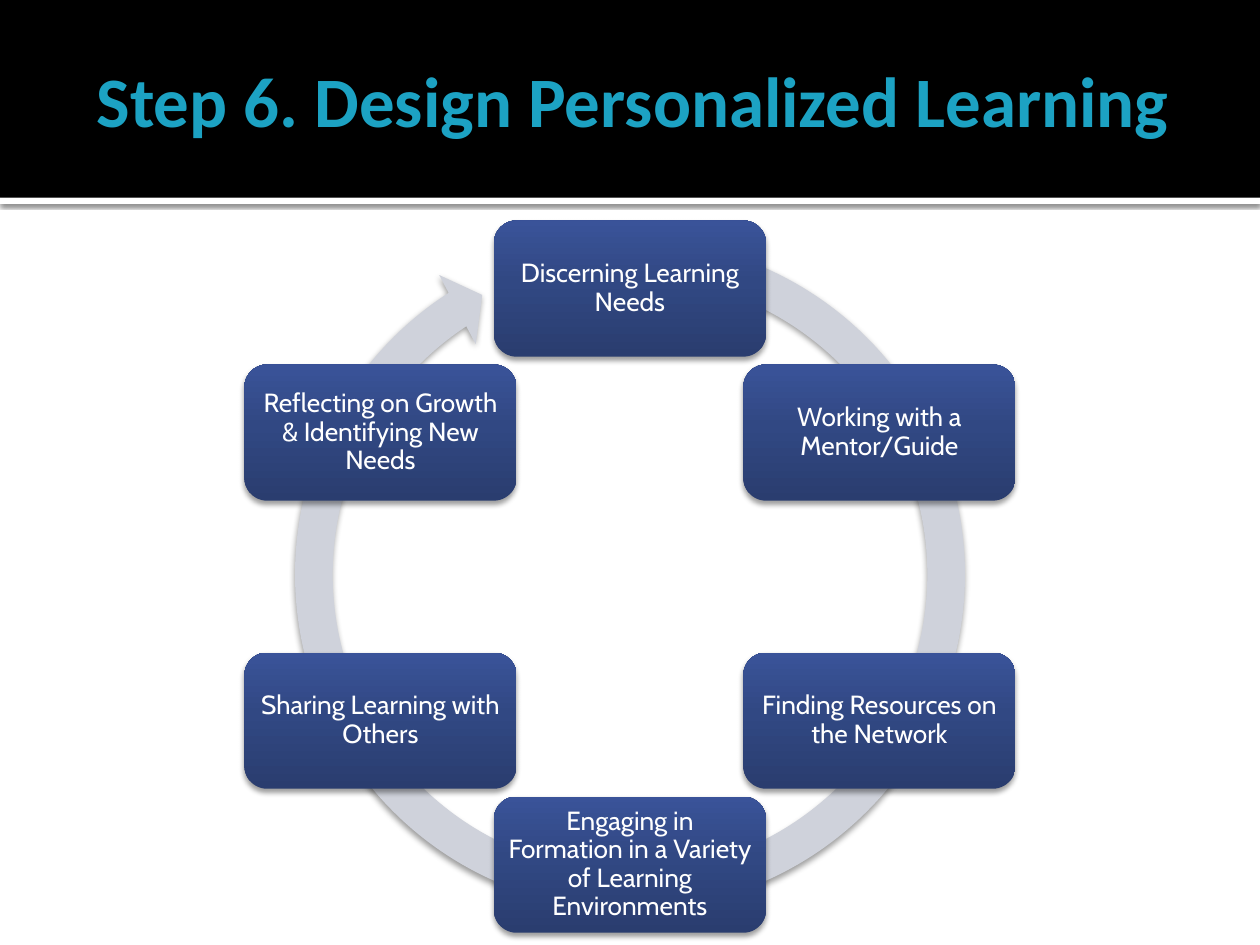
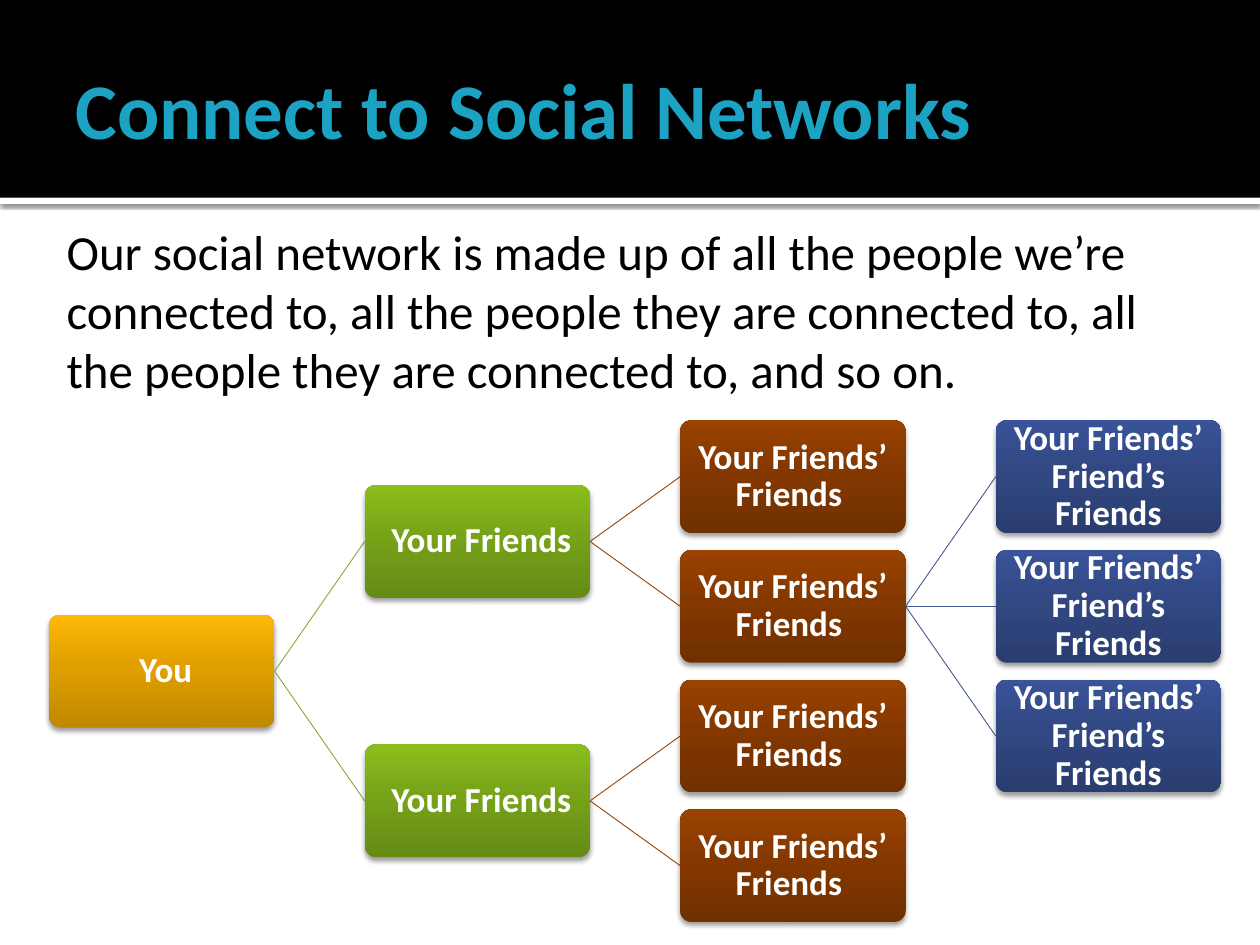
from copy import deepcopy
from math import cos, radians, sin

from lxml.etree import SubElement
from pptx import Presentation
from pptx.dml.color import RGBColor as RGB
from pptx.enum.shapes import MSO_CONNECTOR as CONNECTOR, MSO_SHAPE as SHAPE
from pptx.enum.text import MSO_ANCHOR as ANCHOR, PP_ALIGN as ALIGN
from pptx.oxml.ns import qn
from pptx.util import Pt

BLACK = RGB(0x00, 0x00, 0x00)
WHITE = RGB(0xFF, 0xFF, 0xFF)
TEAL = RGB(0x1C, 0xA2, 0xC3)
RING_GRAY = RGB(0xCF, 0xD2, 0xDB)
GREEN_LINE = RGB(0x84, 0xAA, 0x33)
BROWN_LINE = RGB(0x96, 0x43, 0x05)
BLUE_LINE = RGB(0x47, 0x5A, 0x8D)

# Gradients run from the bottom of a box to its top
GOLD = (RGB(0xBF, 0x88, 0x00), RGB(0xE1, 0xA0, 0x00), RGB(0xFF, 0xB8, 0x07))
GREEN = (RGB(0x65, 0x8B, 0x15), RGB(0x77, 0xA3, 0x19), RGB(0x8B, 0xBE, 0x1D))
BROWN = (RGB(0x70, 0x30, 0x00), RGB(0x84, 0x38, 0x00), RGB(0x9A, 0x42, 0x00))
BLUE = (RGB(0x2A, 0x3D, 0x6F), RGB(0x31, 0x48, 0x83), RGB(0x3A, 0x53, 0x99))
GRADIENT_POSITIONS = (0, 0.55, 1)

HEADING_FONT = "Calibri"
CYCLE_FONT = "Cabin"
SLIDE_WIDTH, SLIDE_HEIGHT = 720, 540
BAND_HEIGHT = 113


class SlideBuilder:
    """Holds the deck's style and the slide being drawn."""

    def __init__(self, deck):
        self.deck = deck
        self.page = None

    def new_page(self, title, size, area):
        self.page = self.deck.slides.add_slide(self.deck.slide_layouts[6])
        rule = self.shape(SHAPE.RECTANGLE, (0, BAND_HEIGHT, SLIDE_WIDTH, 3.6), WHITE)
        self.add_shadow(rule, alpha=60, blur=2.5, distance=0.8)
        self.shape(SHAPE.RECTANGLE, (0, 0, SLIDE_WIDTH, BAND_HEIGHT), BLACK)
        self.text_box(title, area, (7.2, 3.6, 3.6, 3.6), size, TEAL, True, ANCHOR.MIDDLE)

    def shape(self, kind, area, fill):
        shape = self.page.shapes.add_shape(kind, *map(Pt, area))
        shape.shadow.inherit = False
        shape.line.fill.background()
        if isinstance(fill, RGB):
            shape.fill.solid()
            shape.fill.fore_color.rgb = fill
        else:
            self.fill_gradient(shape, fill)
        return shape

    def fill_gradient(self, shape, colors):
        fill = shape.fill
        fill.gradient()
        fill.gradient_angle = 90
        stop_list = shape._element.spPr.find(".//" + qn("a:gsLst"))
        stop_list.append(deepcopy(stop_list[0]))
        for stop, color, position in zip(fill.gradient_stops, colors, GRADIENT_POSITIONS):
            stop.color.rgb = color
            stop.position = position

    def add_shadow(self, shape, alpha=38, blur=3.1, distance=2):
        effects = shape._element.spPr.find(qn("a:effectLst"))
        shadow = SubElement(effects, qn("a:outerShdw"), blurRad=str(Pt(blur)),
                            dist=str(Pt(distance)), dir="5400000", rotWithShape="0")
        color = SubElement(shadow, qn("a:srgbClr"), val=str(BLACK))
        SubElement(color, qn("a:alpha"), val=str(alpha * 1000))

    def set_text(self, shape, text, insets, font, size, color, bold, anchor):
        frame = shape.text_frame
        frame.word_wrap = True
        frame.vertical_anchor = anchor
        (frame.margin_left, frame.margin_top,
         frame.margin_right, frame.margin_bottom) = map(Pt, insets)
        frame.text = text
        para = frame.paragraphs[0]
        for span in para.runs:
            span.font.name = font
            span.font.size = Pt(size)
            span.font.bold = bold
            span.font.color.rgb = color
        return para

    def text_box(self, text, area, insets, size, color, bold=False, anchor=ANCHOR.TOP):
        box = self.page.shapes.add_textbox(*map(Pt, area))
        self.set_text(box, text, insets, HEADING_FONT, size, color, bold, anchor)

    def node(self, text, area, colors, inset, font, size, bold=False, corner=0.1667):
        box = self.shape(SHAPE.ROUNDED_RECTANGLE, area, colors)
        box.adjustments[0] = corner
        self.add_shadow(box)
        para = self.set_text(box, text, (inset,) * 4, font, size, WHITE, bold, ANCHOR.MIDDLE)
        para.alignment = ALIGN.CENTER
        para.line_spacing = 0.9

    def ring_arrow(self, area, adjustments):
        ring = self.shape(SHAPE.CIRCULAR_ARROW, area, RING_GRAY)
        for index, value in enumerate(adjustments):
            ring.adjustments[index] = value
        self.add_shadow(ring)

    def link(self, start, end, color):
        line = self.page.shapes.add_connector(CONNECTOR.STRAIGHT, *map(Pt, start + end))
        line.line.color.rgb = color
        line.line.width = Pt(0.5)
        SubElement(line._element.spPr, qn("a:effectLst"))


def build_learning_cycle(builder):
    builder.new_page("Step 6. Design Personalized Learning", 40.5, (48.2, 18, 662.4, 77.8))
    builder.ring_arrow((157, 125.3, 406, 406), (0.053, 3.126, 142.156, 171.343, 0.055))

    # Steps sit clockwise at equal angles, from the top
    steps = (
        "Discerning Learning Needs",
        "Working with a Mentor/Guide",
        "Finding Resources on the Network",
        "Engaging in Formation in a Variety of Learning Environments",
        "Sharing Learning with Others",
        "Reflecting on Growth & Identifying New Needs",
    )
    center_x, center_y, radius = 360, 329.5, 164.6
    width, height = 155.5, 77.8
    for index, step in enumerate(steps):
        angle = radians(360 / len(steps) * index)
        left = center_x + radius * sin(angle) - width / 2
        top = center_y - radius * cos(angle) - height / 2
        builder.node(step, (left, top, width, height), BLUE, 4.3, CYCLE_FONT, 15)


def build_social_network(builder):
    builder.new_page("Connect to Social Networks", 45, (36, 12.2, 648, 98.6))
    builder.text_box(
        "Our social network is made up of all the people we’re connected to, "
        "all the people they are connected to, all the people they are "
        "connected to, and so on.",
        (33.8, 119.5, 648, 112.3), (4.3, 7.2, 7.2, 3.6), 28, BLACK)

    # Each column: label, box gradient, line colour, (row, parent row) pairs
    columns = (
        (" You", GOLD, None, ((1.5, None),)),
        (" Your Friends", GREEN, GREEN_LINE, ((0.5, 1.5), (2.5, 1.5))),
        ("Your Friends’ Friends ", BROWN, BROWN_LINE,
         ((0, 0.5), (1, 0.5), (2, 2.5), (3, 2.5))),
        ("Your Friends’ Friend’s Friends", BLUE, BLUE_LINE, ((0, 1), (1, 1), (2, 1))),
    )
    width, height = 128.8, 64.4
    column_step, row_step = 180.3, 74.1
    first_left, first_top = 28.1, 240.2
    for index, (label, colors, line_color, rows) in enumerate(columns):
        left = first_left + column_step * index
        parent_right = left - column_step + width
        for row, parent_row in rows:
            top = first_top + row_step * row
            if parent_row is not None:
                parent_middle = first_top + row_step * parent_row + height / 2
                builder.link((parent_right, parent_middle), (left, top + height / 2), line_color)
            builder.node(label, (left, top, width, height), colors, 0.9,
                         HEADING_FONT, 20, bold=True, corner=0.1)


def main():
    deck = Presentation()
    deck.slide_width, deck.slide_height = Pt(SLIDE_WIDTH), Pt(SLIDE_HEIGHT)
    builder = SlideBuilder(deck)
    build_learning_cycle(builder)
    build_social_network(builder)
    deck.save("out.pptx")


if __name__ == "__main__":
    main()
